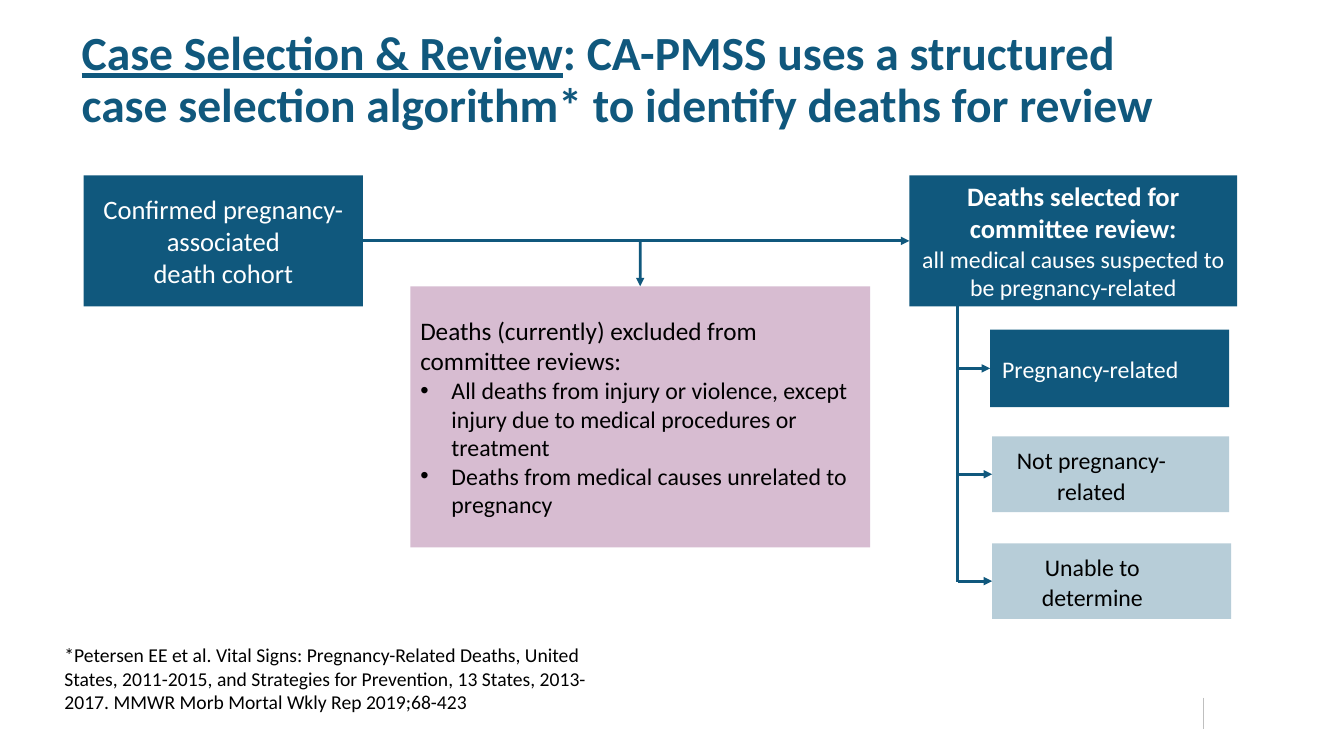
from lxml import etree
from pptx import Presentation
from pptx.dml.color import RGBColor
from pptx.enum.shapes import MSO_CONNECTOR, MSO_SHAPE
from pptx.enum.text import MSO_ANCHOR, MSO_AUTO_SIZE, PP_ALIGN
from pptx.oxml.ns import qn
from pptx.util import Inches, Pt

FONT = "Calibri"
BLUE, PALE_BLUE, PINK = "10587D", "B7CDD8", "D7BCD1"
WHITE, BLACK, GREY = "FFFFFF", "000000", "BFBFBF"
TOP, BOTTOM, LEFT, RIGHT = 0, 2, 1, 3

TITLE = ["Case Selection & Review",
         ": CA-PMSS uses a structured case selection algorithm* to identify deaths for review"]
# Paragraphs: (text, size, bold)
COHORT = [("Confirmed pregnancy-associated", 19, False),
          ("death cohort", 19, False)]
SELECTED = [("Deaths selected for committee review:", 19, True),
            ("all medical causes suspected to be pregnancy-related", 17, False)]
EXCLUDED_LEAD = "Deaths (currently) excluded from committee reviews:"
EXCLUDED_CAUSES = [
    "All deaths from injury or violence, except injury due to medical procedures or treatment",
    "Deaths from medical causes unrelated to pregnancy",
]
# Review outcomes: (text, (left, top, width, height), fill, text colour)
OUTCOMES = [
    ("Pregnancy-related", (9.82, 3.27, 2.37, 0.77), BLUE, WHITE),
    ("Not pregnancy-related", (9.84, 4.33, 2.35, 0.75), PALE_BLUE, BLACK),
    ("Unable to determine", (9.84, 5.39, 2.37, 0.75), PALE_BLUE, BLACK),
]
CITATION = ("*Petersen EE et al. Vital Signs: Pregnancy-Related Deaths, United States, 2011-2015, "
            "and Strategies for Prevention, 13 States, 2013-2017. "
            "MMWR Morb Mortal Wkly Rep 2019;68-423")
TRUNK_X = 9.5


def rgb(color):
    return RGBColor.from_string(color)


def add_run(paragraph, text, size, color, bold=False):
    run = paragraph.add_run()
    run.text = text
    run.font.name = FONT
    run.font.size = Pt(size)
    run.font.bold = bold
    run.font.color.rgb = rgb(color)
    return run


def next_paragraph(frame, index):
    return frame.add_paragraph() if index else frame.paragraphs[0]


def add_box(slide, place, fill):
    box = slide.shapes.add_shape(MSO_SHAPE.RECTANGLE, *map(Inches, place))
    box.shadow.inherit = False
    box.fill.solid()
    box.fill.fore_color.rgb = rgb(fill)
    box.line.fill.background()
    box.text_frame.word_wrap = True
    box.text_frame.vertical_anchor = MSO_ANCHOR.MIDDLE
    return box


def add_centered_box(slide, place, fill, paragraphs, color, spacing=1.0):
    box = add_box(slide, place, fill)
    for index, (text, size, bold) in enumerate(paragraphs):
        paragraph = next_paragraph(box.text_frame, index)
        paragraph.alignment = PP_ALIGN.CENTER
        paragraph.line_spacing = spacing
        add_run(paragraph, text, size, color, bold)
    return box


def add_line(slide, start, end, color=BLUE, width=2, arrow=False):
    line = slide.shapes.add_connector(MSO_CONNECTOR.STRAIGHT, *map(Inches, start + end))
    line.line.color.rgb = rgb(color)
    line.line.width = Pt(width)
    if arrow:
        etree.SubElement(line.line._get_or_add_ln(), qn("a:tailEnd"), type="triangle")
    etree.SubElement(line._element.spPr, qn("a:effectLst"))
    return line


def add_bullet(paragraph, indent):
    properties = paragraph._p.get_or_add_pPr()
    properties.set("marL", str(Inches(indent)))
    properties.set("indent", str(-Inches(indent)))
    etree.SubElement(properties, qn("a:buFont"), typeface="Arial")
    etree.SubElement(properties, qn("a:buChar"), char="•")


def add_title(slide):
    title = slide.shapes.title
    title.left, title.top, title.width, title.height = map(Inches, (0.71, 0.36, 11.29, 0.89))
    frame = title.text_frame
    frame.auto_size = MSO_AUTO_SIZE.NONE
    frame.vertical_anchor = MSO_ANCHOR.MIDDLE
    paragraph = frame.paragraphs[0]
    paragraph.alignment = PP_ALIGN.LEFT
    paragraph.line_spacing = 0.9
    topic, claim = TITLE
    add_run(paragraph, topic, 34, BLUE, True).font.underline = True
    add_run(paragraph, claim, 34, BLUE, True)


def add_excluded(slide):
    box = add_box(slide, (4.07, 2.84, 4.56, 2.59), PINK)
    for index, text in enumerate([EXCLUDED_LEAD] + EXCLUDED_CAUSES):
        paragraph = next_paragraph(box.text_frame, index)
        paragraph.alignment = PP_ALIGN.LEFT
        if index:
            add_bullet(paragraph, 0.31)
        add_run(paragraph, text, 17 if index else 18, BLACK)
    return box


def add_outcomes(slide):
    add_line(slide, (TRUNK_X, 3.03), (TRUNK_X, 5.77))
    for text, place, fill, color in OUTCOMES:
        box = add_centered_box(slide, place, fill, [(text, 17, False)], color, 1.07)
        box.text_frame.margin_right = Inches(0.48)
        left, top, _, height = place
        middle = top + height / 2
        branch = add_line(slide, (TRUNK_X, middle), (left, middle), arrow=True)
        branch.end_connect(box, LEFT)


def add_citation(slide):
    citation = slide.shapes.add_textbox(*map(Inches, (0.54, 6.33, 5.68, 0.81)))
    citation.text_frame.word_wrap = True
    add_run(citation.text_frame.paragraphs[0], CITATION, 14, BLACK)


def main():
    presentation = Presentation()
    presentation.slide_width = Inches(13.33)
    presentation.slide_height = Inches(7.5)
    slide = presentation.slides.add_slide(presentation.slide_layouts[5])

    add_line(slide, (11.94, 6.92), (11.94, 7.23), GREY, 0.5)
    add_title(slide)
    cohort = add_centered_box(slide, (0.83, 1.74, 2.77, 1.3), BLUE, COHORT, WHITE)
    selected = add_centered_box(slide, (9.02, 1.74, 3.25, 1.3), BLUE, SELECTED, WHITE)
    add_outcomes(slide)
    excluded = add_excluded(slide)
    add_citation(slide)

    selection = add_line(slide, (3.6, 2.39), (9.02, 2.39), arrow=True)
    selection.begin_connect(cohort, RIGHT)
    selection.end_connect(selected, LEFT)
    exclusion = add_line(slide, (6.35, 2.39), (6.35, 2.84), arrow=True)
    exclusion.end_connect(excluded, TOP)

    presentation.save("out.pptx")


if __name__ == "__main__":
    main()
